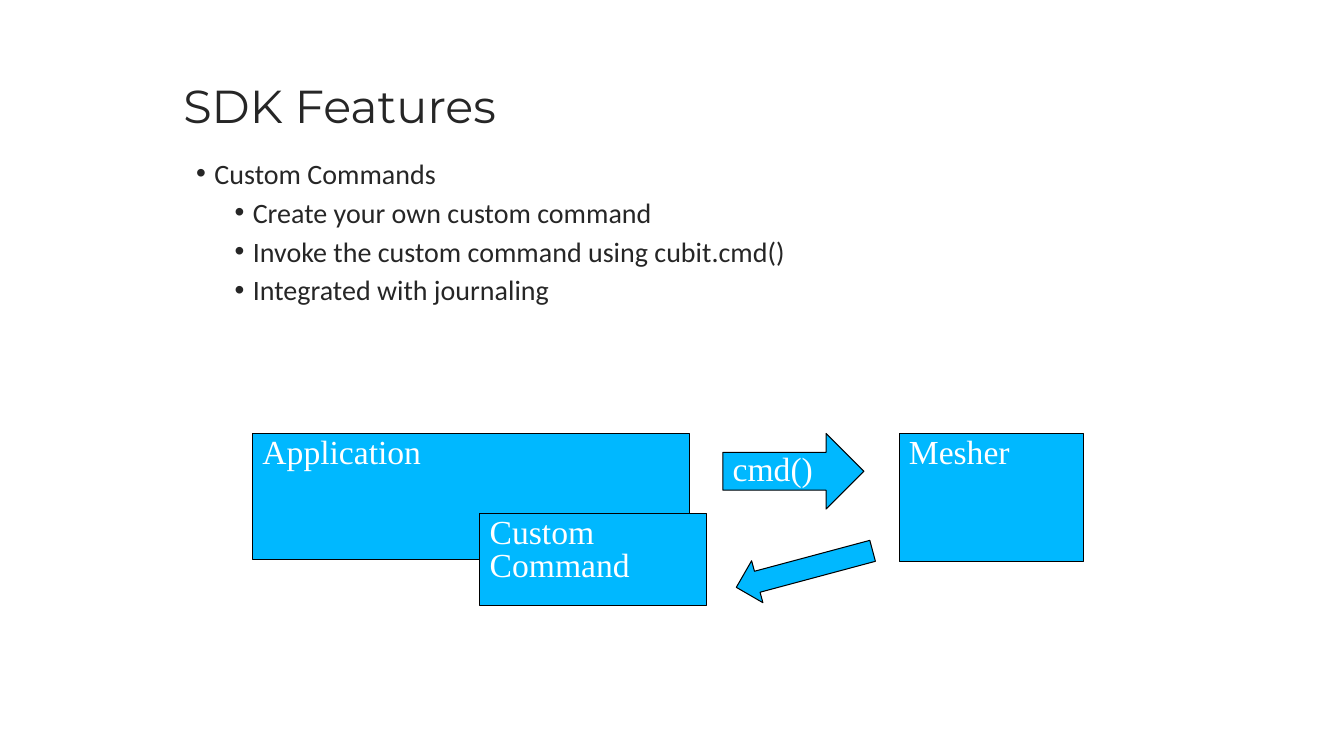
from pptx import Presentation
from pptx.dml.color import RGBColor
from pptx.enum.shapes import MSO_SHAPE
from pptx.enum.text import MSO_ANCHOR, MSO_AUTO_SIZE, PP_ALIGN
from pptx.oxml.ns import qn
from pptx.util import Pt
from lxml import etree

RECT, ARROW = MSO_SHAPE.RECTANGLE, MSO_SHAPE.RIGHT_ARROW
TOP, MIDDLE = MSO_ANCHOR.TOP, MSO_ANCHOR.MIDDLE
LEFT, NO_FIT = PP_ALIGN.LEFT, MSO_AUTO_SIZE.NONE

COLORS = {"ink": "262626", "fill": "00B8FF", "line": "000000", "label": "FFFFFF"}

POINTS = [
    (0, "Custom Commands"),
    (1, "Create your own custom command"),
    (1, "Invoke the custom command using cubit.cmd()"),
    (1, "Integrated with journaling"),
]

ROW = 309.6
BLOCKS = [
    (RECT, "Mesher", 642.2, ROW, 131.8, 91.8, 0, TOP),
    (RECT, "Application", 180.4, ROW, 312, 90, 0, TOP),
    (RECT, "Custom Command", 342.7, 366.6, 162, 66, 0, TOP),
    (ARROW, "cmd()", 516.3, ROW, 100.8, 54, 0, MIDDLE),
    (ARROW, "", 524.2, 391, 100.8, 31, 165, MIDDLE),
]


def color(key):
    return RGBColor.from_string(COLORS[key])


def style(par, face, size, key):
    par.alignment = LEFT
    for run in par.runs:
        run.font.name = face
        run.font.size = Pt(size)
        run.font.color.rgb = color(key)


def add_title(slide, text):
    title = slide.shapes.title
    title.left, title.top, title.width, title.height = Pt(123.8), Pt(51.1), Pt(518.4), Pt(47.5)
    frame = title.text_frame
    frame.text = text
    frame.auto_size = NO_FIT
    frame.vertical_anchor = MIDDLE
    style(frame.paragraphs[0], "Montserrat", 33, "ink")


def add_bullet(par, level):
    par.level = level
    props = par._p.get_or_add_pPr()
    props.set("marL", str(Pt(53.3 if level else 25.9)))
    props.set("indent", str(Pt(-13)))
    etree.SubElement(props, qn("a:buFont")).set("typeface", "Arial")
    etree.SubElement(props, qn("a:buChar")).set("char", "•")


def add_list(slide, points):
    box = slide.shapes.add_textbox(Pt(120.2), Pt(108), Pt(653.8), Pt(116.6))
    frame = box.text_frame
    frame.word_wrap = True
    for i, (level, text) in enumerate(points):
        par = frame.add_paragraph() if i else frame.paragraphs[0]
        par.text = text
        add_bullet(par, level)
        if i:
            par.space_before = Pt(3.8)
        style(par, "Calibri", 20, "ink")


def add_block(slide, kind, text, left, top, width, height, turn, anchor):
    block = slide.shapes.add_shape(kind, Pt(left), Pt(top), Pt(width), Pt(height))
    block.rotation = turn
    block.shadow.inherit = False
    block.fill.solid()
    block.fill.fore_color.rgb = color("fill")
    block.line.color.rgb = color("line")
    block.line.width = Pt(0.75)
    if text:
        frame = block.text_frame
        frame.text = text
        frame.word_wrap = True
        frame.vertical_anchor = anchor
        par = frame.paragraphs[0]
        par.line_spacing = 0.82
        style(par, "Times New Roman", 24, "label")


def main():
    deck = Presentation()
    deck.slide_width, deck.slide_height = Pt(960), Pt(540)
    slide = deck.slides.add_slide(deck.slide_layouts[5])
    add_title(slide, "SDK Features")
    add_list(slide, POINTS)
    for block in BLOCKS:
        add_block(slide, *block)
    deck.save("out.pptx")


if __name__ == "__main__":
    main()
